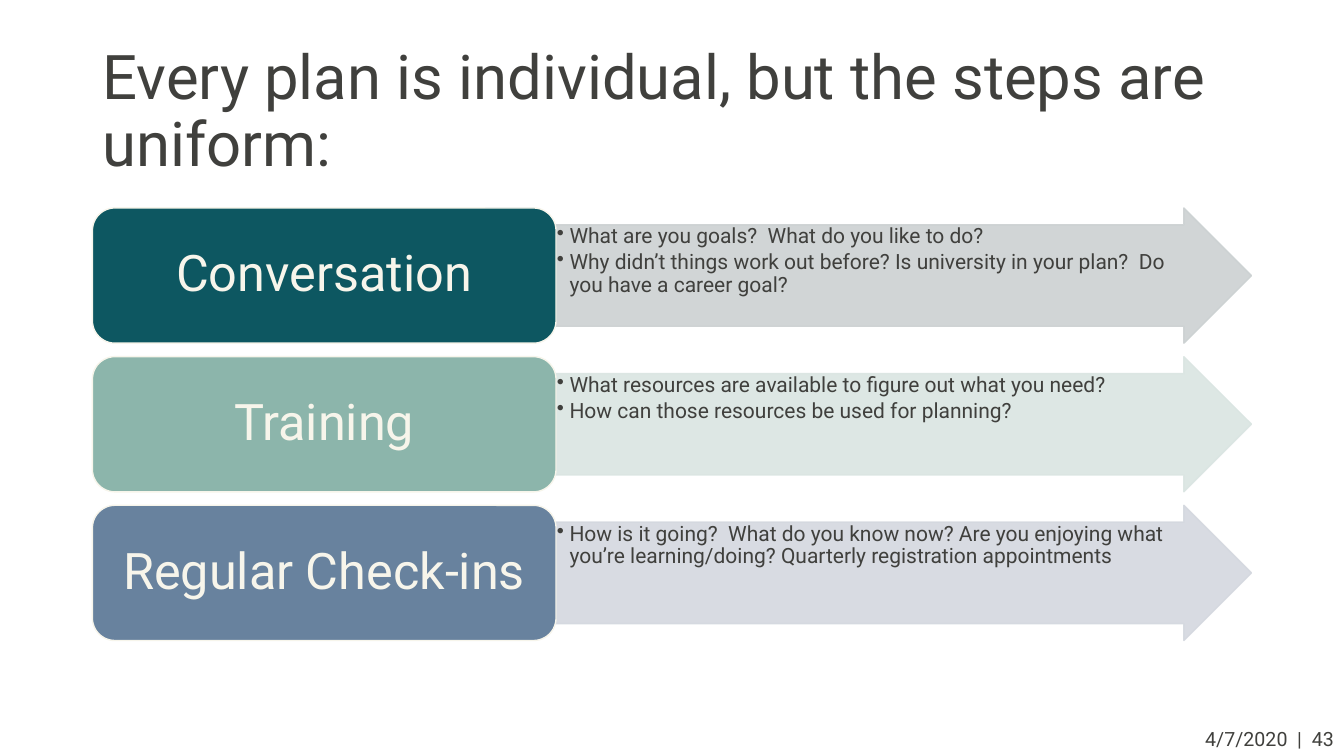
from lxml import etree
from pptx import Presentation
from pptx.dml.color import RGBColor
from pptx.enum import shapes, text
from pptx.oxml import ns
from pptx.util import Cm, Pt

COLORS = {
    "ink": "40403D", "cream": "F7F5EB",
    "teal": "0D5761", "teal_pale": "CCD1D2",
    "sage": "8CB5AB", "sage_pale": "DAE5E2",
    "slate": "68829E", "slate_pale": "D4D8DF",
}
FONT = "Roboto"

STEPS = [
    ("Conversation", "teal", [
        "What are you goals?  What do you like to do?",
        "Why didn’t things work out before? Is university in your plan?  "
        "Do you have a career goal?"]),
    ("Training", "sage", [
        "What resources are available to figure out what you need?",
        "How can those resources be used for planning?"]),
    ("Regular Check-ins", "slate", [
        "How is it going?  What do you know now? Are you enjoying what "
        "you’re learning/doing? Quarterly registration appointments"]),
]


def rgb(name):
    return RGBColor.from_string(COLORS[name])


def set_frame(frame, anchor, left, top, right, bottom):
    frame.word_wrap = True
    frame.vertical_anchor = anchor
    frame.margin_left, frame.margin_top = Cm(left), Cm(top)
    frame.margin_right, frame.margin_bottom = Cm(right), Cm(bottom)


def style(paragraph, size, color, align, line_spacing=0.9):
    paragraph.alignment = align
    paragraph.line_spacing = line_spacing
    paragraph.font.size = Pt(size)
    paragraph.font.name = FONT
    paragraph.font.color.rgb = rgb(color)


def add_bullet(paragraph, indent):
    properties = paragraph._p.get_or_add_pPr()
    properties.set("marL", str(Cm(indent)))
    properties.set("indent", str(-Cm(indent)))
    etree.SubElement(properties, ns.qn("a:buChar")).set("char", "•")


def add_block(slide, kind, box, fill, line):
    shape = slide.shapes.add_shape(kind, *map(Cm, box))
    shape.shadow.inherit = False
    shape.fill.solid()
    shape.fill.fore_color.rgb = rgb(fill)
    shape.line.color.rgb = rgb(line)
    shape.line.width = Pt(1)
    return shape


def set_opacity(shape, percent):
    for color in shape._element.spPr.iter(ns.qn("a:srgbClr")):
        etree.SubElement(color, ns.qn("a:alpha")).set("val", str(percent * 1000))


def add_line_of_text(slide, box, words, size, anchor, align, line_spacing):
    textbox = slide.shapes.add_textbox(*map(Cm, box))
    set_frame(textbox.text_frame, anchor, 0.25, 0.13, 0.25, 0.13)
    paragraph = textbox.text_frame.paragraphs[0]
    paragraph.text = words
    style(paragraph, size, "ink", align, line_spacing)


def add_step(slide, box, name, color, questions):
    left, top, width, height = box
    label_width = width * 0.4

    # Arrow with the questions
    arrow_box = (left + label_width, top, width - label_width, height)
    pale = color + "_pale"
    arrow = add_block(slide, shapes.MSO_SHAPE.RIGHT_ARROW, arrow_box, pale, pale)
    arrow.adjustments[0], arrow.adjustments[1] = 0.75, 0.5
    set_opacity(arrow, 90)
    frame = arrow.text_frame
    set_frame(frame, text.MSO_ANCHOR.TOP, 0.02, 0.02, 0.86, 0.02)
    for index, question in enumerate(questions):
        paragraph = frame.add_paragraph() if index else frame.paragraphs[0]
        paragraph.text = question
        paragraph.level = 1
        add_bullet(paragraph, 0.32)
        style(paragraph, 15, "ink", text.PP_ALIGN.LEFT)
        paragraph.space_after = Pt(2.5)

    # Label with the step name
    label_box = (left, top, label_width, height)
    label = add_block(slide, shapes.MSO_SHAPE.ROUNDED_RECTANGLE, label_box,
                      color, "cream")
    set_frame(label.text_frame, text.MSO_ANCHOR.MIDDLE, 0.38, 0.19, 0.38, 0.19)
    paragraph = label.text_frame.paragraphs[0]
    paragraph.text = name
    style(paragraph, 36, "cream", text.PP_ALIGN.CENTER)


def add_steps(slide, box):
    left, top, width, height = box
    gap = 0.34
    row_height = (height - gap * (len(STEPS) - 1)) / len(STEPS)
    for index, step in enumerate(STEPS):
        row_top = top + index * (row_height + gap)
        add_step(slide, (left, row_top, width, row_height), *step)


def main():
    presentation = Presentation()
    presentation.slide_width, presentation.slide_height = Cm(33.87), Cm(19.05)
    slide = presentation.slides.add_slide(presentation.slide_layouts[6])

    # Title
    add_line_of_text(slide, (2.33, 1.01, 29.21, 3.68),
                     "Every plan is individual, but the steps are uniform:",
                     44, text.MSO_ANCHOR.MIDDLE, text.PP_ALIGN.LEFT, 0.9)
    # Three steps
    add_steps(slide, (2.33, 5.24, 29.21, 10.9))
    # Date and page number
    add_line_of_text(slide, (29.52, 18.19, 4.35, 0.86), "4/7/2020  |  43",
                     14, text.MSO_ANCHOR.TOP, text.PP_ALIGN.RIGHT, 1.0)
    presentation.save("out.pptx")


if __name__ == "__main__":
    main()
